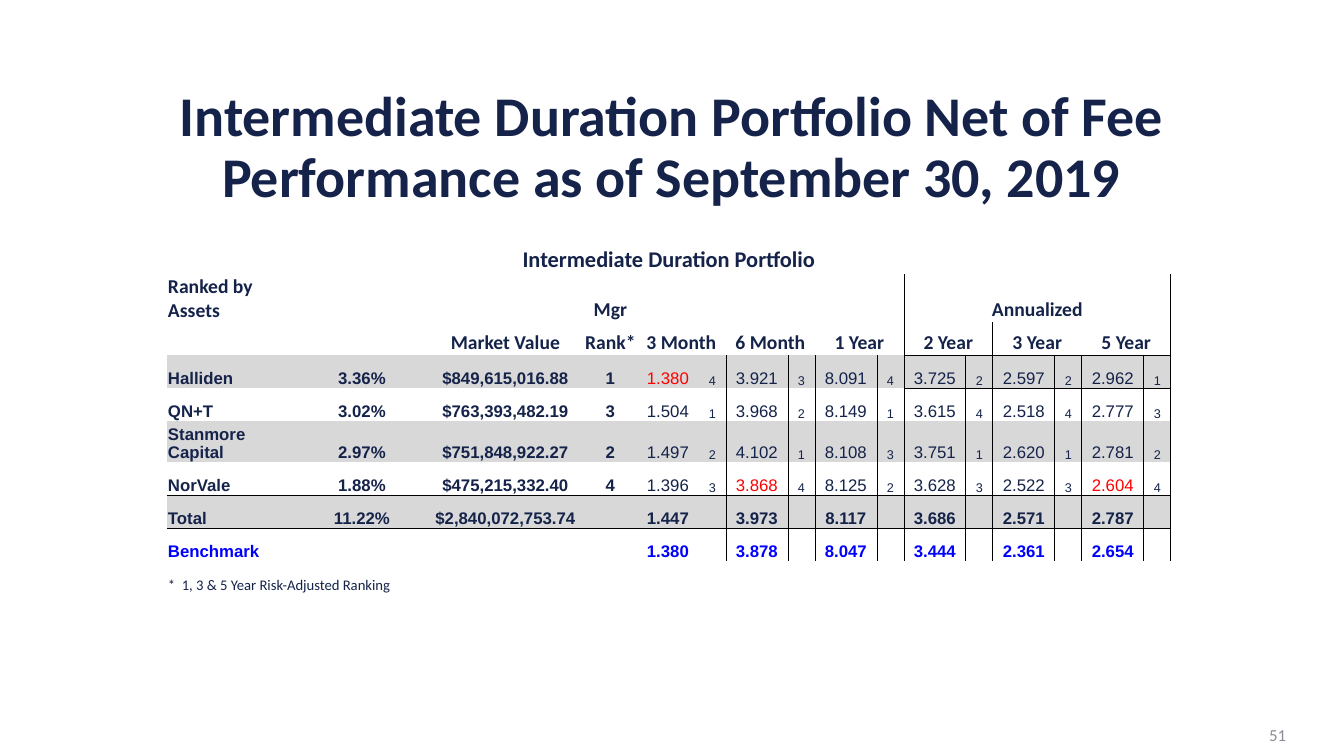
from collections import defaultdict

from lxml.etree import SubElement
from pptx import Presentation
from pptx.dml.color import RGBColor
from pptx.enum.text import MSO_ANCHOR as Anchor, PP_ALIGN as Align
from pptx.oxml.ns import qn
from pptx.util import Pt

EMU_PER_PX = 12192000 / 1344
NAVY, RED, BLUE = "15234A", "FF0000", "0000FF"
GREY, BLACK, PAGE_GREY = "D8D8D8", "000000", "8C8D96"
PLAIN_TABLE_STYLE = "{2D5ABB26-0587-4C30-8999-92F81FD0307C}"

COLUMN_WIDTHS = [130, 130, 157, 53] + [62, 27] * 6
ROW_HEIGHTS = [33, 48] + [33] * 8
FIRST_PERIOD, FIRST_ANNUALIZED, COLUMN_COUNT = 4, 10, len(COLUMN_WIDTHS)
TITLE_ROW, GROUP_ROW, HEADER_ROW, FIRST_MANAGER, TOTAL_ROW, BENCHMARK_ROW, NOTE_ROW = 0, 1, 2, 3, 7, 8, 9
SHADED_ROWS = (3, 5, 7)

PERIODS = ["3 Month", "6 Month", "1 Year", "2 Year", "3 Year", "5 Year"]
MANAGERS = [
    (["Halliden", "3.36%", "$849,615,016.88", "1"],
     ["1.380", "3.921", "8.091", "3.725", "2.597", "2.962"], "434221"),
    (["QN+T", "3.02%", "$763,393,482.19", "3"],
     ["1.504", "3.968", "8.149", "3.615", "2.518", "2.777"], "121443"),
    (["Stanmore Capital", "2.97%", "$751,848,922.27", "2"],
     ["1.497", "4.102", "8.108", "3.751", "2.620", "2.781"], "213112"),
    (["NorVale", "1.88%", "$475,215,332.40", "4"],
     ["1.396", "3.868", "8.125", "3.628", "2.522", "2.604"], "342334"),
]
TOTAL = ["Total", "11.22%", "$2,840,072,753.74"]
TOTAL_RETURNS = ["1.447", "3.973", "8.117", "3.686", "2.571", "2.787"]
BENCHMARK_RETURNS = ["1.380", "3.878", "8.047", "3.444", "2.361", "2.654"]


def px(length):
    return round(length * EMU_PER_PX)


def color(hex_string):
    return RGBColor.from_string(hex_string)


def write(frame, text, size=12, font="Arial", hex_color=NAVY, bold=True,
          align=Align.CENTER, line_spacing=None):
    paragraph = frame.paragraphs[0]
    paragraph.alignment = align
    paragraph.line_spacing = line_spacing
    run = paragraph.add_run()
    run.text = text
    run.font.size = Pt(size)
    run.font.name = font
    run.font.bold = bold
    run.font.color.rgb = color(hex_color)


def add_text(slide, text, left, top, width, height, **text_format):
    box = slide.shapes.add_textbox(px(left), px(top), px(width), px(height))
    box.text_frame.word_wrap = True
    box.text_frame.vertical_anchor = Anchor.MIDDLE
    write(box.text_frame, text, **text_format)


def add_plain_table(slide, left, top):
    frame = slide.shapes.add_table(
        len(ROW_HEIGHTS), COLUMN_COUNT, px(left), px(top),
        px(sum(COLUMN_WIDTHS)), px(sum(ROW_HEIGHTS)))
    table = frame.table
    table.first_row = table.horz_banding = False
    table._tbl.find(".//" + qn("a:tableStyleId")).text = PLAIN_TABLE_STYLE
    for column, width in zip(table.columns, COLUMN_WIDTHS):
        column.width = px(width)
    for row, height in zip(table.rows, ROW_HEIGHTS):
        row.height = px(height)
    return table


def merge_cells(table):
    spans = [(TITLE_ROW, 0, COLUMN_COUNT), (GROUP_ROW, FIRST_ANNUALIZED, 6), (NOTE_ROW, 0, 3)]
    spans += [(HEADER_ROW, column, 2) for column in range(FIRST_PERIOD, COLUMN_COUNT, 2)]
    for row, column, count in spans:
        table.cell(row, column).merge(table.cell(row, column + count - 1))


def find_edges():
    """Map each (row, column) to the letters of its ruled sides."""
    edges = defaultdict(set)

    def rule_right(row, column):
        edges[row, column].add("R")
        if column + 1 < COLUMN_COUNT:
            edges[row, column + 1].add("L")

    def rule_below(row, column):
        edges[row, column].add("B")
        edges[row + 1, column].add("T")

    for row in range(FIRST_MANAGER, NOTE_ROW):
        for column in range(FIRST_PERIOD + 1, COLUMN_COUNT, 2):
            rule_right(row, column)
    for row, last_origin in ((GROUP_ROW, FIRST_ANNUALIZED), (HEADER_ROW, COLUMN_COUNT - 2)):
        rule_right(row, FIRST_ANNUALIZED - 1)
        rule_right(row, COLUMN_COUNT - 1)
        edges[row, last_origin].add("R")
    for column in range(FIRST_ANNUALIZED, COLUMN_COUNT):
        rule_below(HEADER_ROW, column)
    for column in range(COLUMN_COUNT):
        rule_below(TOTAL_ROW - 1, column)
    return edges


def format_cells(table):
    edges = find_edges()
    for row in range(len(ROW_HEIGHTS)):
        for column in range(COLUMN_COUNT):
            cell = table.cell(row, column)
            cell.vertical_anchor = Anchor.BOTTOM
            cell.margin_left = cell.margin_right = cell.margin_top = px(1)
            cell.margin_bottom = 0
            for side in sorted(edges[row, column], key="LRTB".index):
                line = SubElement(cell._tc.get_or_add_tcPr(), qn("a:ln" + side), w=str(Pt(0.5)))
                fill = SubElement(line, qn("a:solidFill"))
                SubElement(fill, qn("a:srgbClr"), val=BLACK)
            if row in SHADED_ROWS:
                cell.fill.solid()
                cell.fill.fore_color.rgb = color(GREY)
            else:
                cell.fill.background()


def fill_headers(table):
    headers = [
        (GROUP_ROW, 0, "Ranked by Assets"), (GROUP_ROW, 3, "Mgr"),
        (GROUP_ROW, FIRST_ANNUALIZED, "Annualized"),
        (HEADER_ROW, 2, "Market Value"), (HEADER_ROW, 3, "Rank*"),
    ]
    headers += [(HEADER_ROW, FIRST_PERIOD + 2 * i, name) for i, name in enumerate(PERIODS)]
    write(table.cell(TITLE_ROW, 0).text_frame, "Intermediate Duration Portfolio",
          size=16, font="Calibri")
    for row, column, text in headers:
        write(table.cell(row, column).text_frame, text, size=14, font="Calibri",
              align=Align.CENTER if column else Align.LEFT)
    write(table.cell(NOTE_ROW, 0).text_frame, "*  1, 3 & 5 Year Risk-Adjusted Ranking",
          size=10.5, font="Calibri", bold=False, align=Align.LEFT)


def fill_row(table, row, labels, returns, ranks="", hex_color=NAVY):
    """Ranked returns are light, and red when they do not beat the benchmark."""
    for column, label in enumerate(labels):
        write(table.cell(row, column).text_frame, label, hex_color=hex_color,
              align=Align.CENTER if column else Align.LEFT)
    for i, (value, benchmark) in enumerate(zip(returns, BENCHMARK_RETURNS)):
        column = FIRST_PERIOD + 2 * i
        lags = ranks and float(value) <= float(benchmark)
        write(table.cell(row, column).text_frame, value, bold=not ranks,
              hex_color=RED if lags else hex_color)
        if ranks:
            write(table.cell(row, column + 1).text_frame, ranks[i], size=9, bold=False)


def main():
    presentation = Presentation()
    presentation.slide_width, presentation.slide_height = px(1344), px(756)
    slide = presentation.slides.add_slide(presentation.slide_layouts[6])

    add_text(slide, "Intermediate Duration Portfolio Net of Fee Performance as of September 30, 2019",
             92, 76, 1159, 146, size=40, font="Calibri", line_spacing=0.9)

    table = add_plain_table(slide, 167, 241)
    merge_cells(table)
    format_cells(table)
    fill_headers(table)
    for row, (labels, returns, ranks) in enumerate(MANAGERS, FIRST_MANAGER):
        fill_row(table, row, labels, returns, ranks)
    fill_row(table, TOTAL_ROW, TOTAL, TOTAL_RETURNS)
    fill_row(table, BENCHMARK_ROW, ["Benchmark"], BENCHMARK_RETURNS, hex_color=BLUE)

    add_text(slide, "51", 994, 715, 302, 40, font="Calibri", hex_color=PAGE_GREY,
             bold=False, align=Align.RIGHT)
    presentation.save("out.pptx")


if __name__ == "__main__":
    main()
